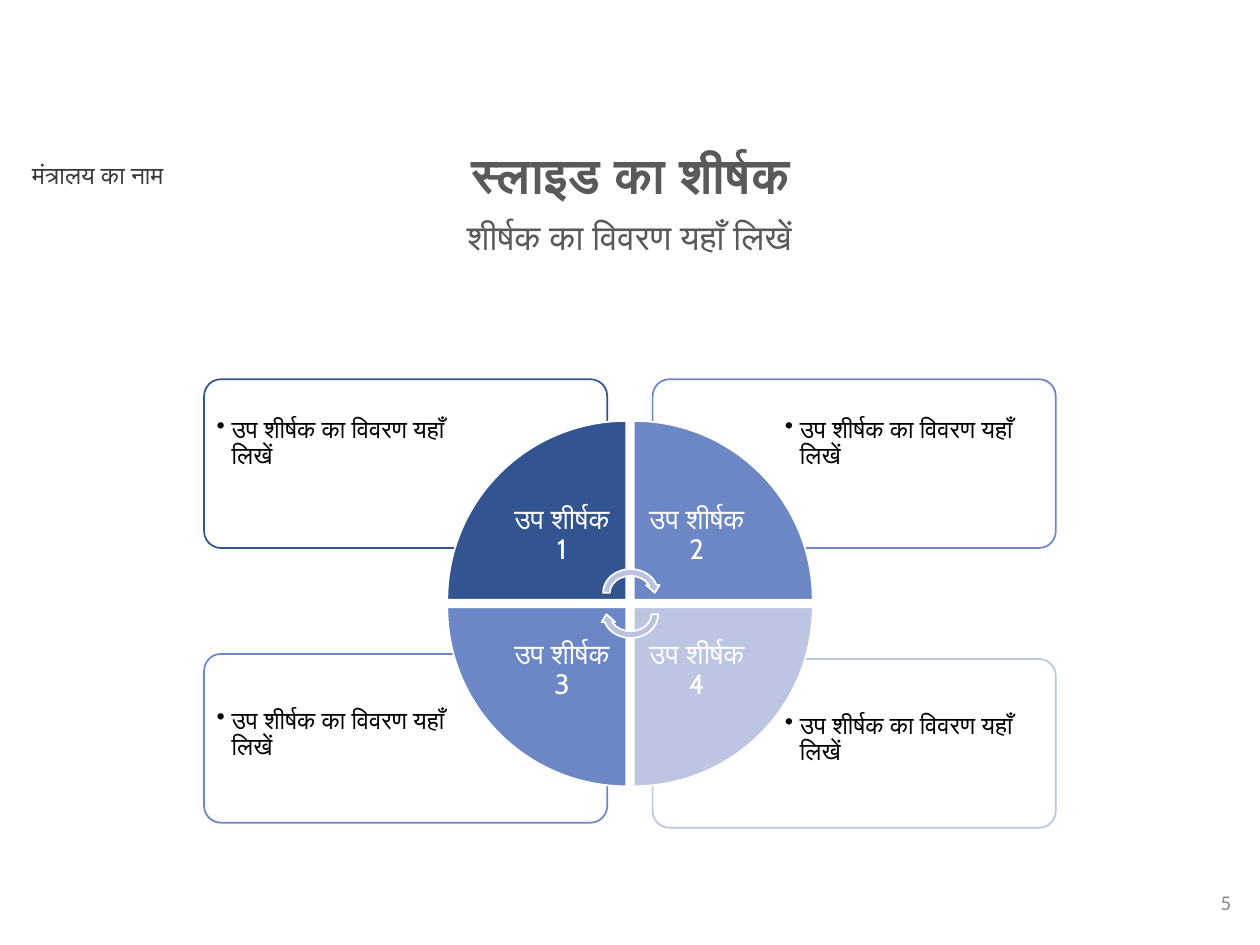
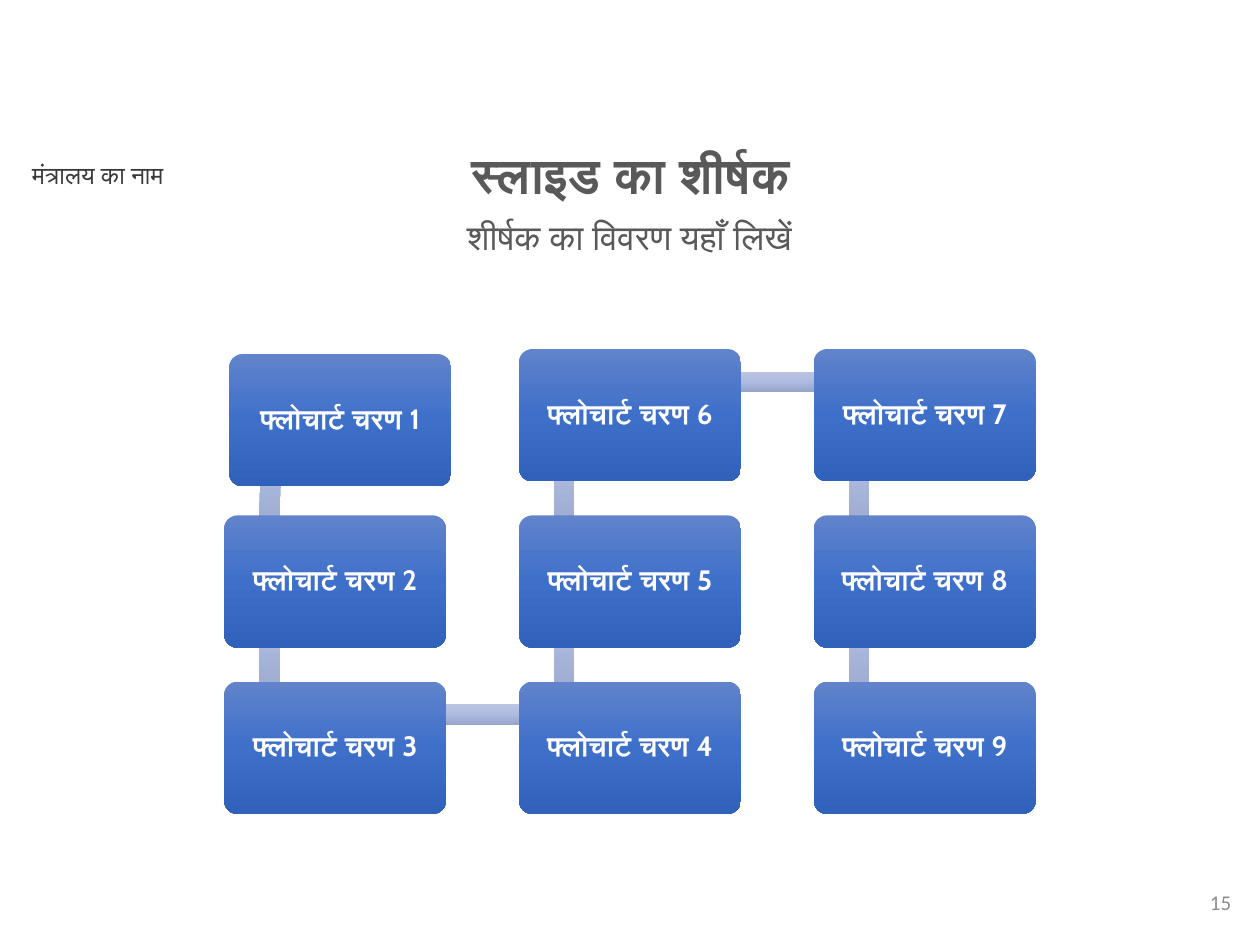
from dataclasses import dataclass
from itertools import pairwise
from typing import NamedTuple

from lxml import etree
from pptx import Presentation
from pptx import util as u
from pptx.dml.color import RGBColor
from pptx.enum import shapes, text
from pptx.oxml.ns import qn

PX = 9144  # 100 px to the inch
TITLE_ONLY = 5
WHITE, BLACK, GREY = "FFFFFF", "000000", "595959"
NAVY, BLUE, PALE, ARROW = "325491", "6C87C5", "BCC6E2", "B9C2E1"
STEP_STOPS = ("6183CB", "3E70CA", "3062BB")
LINK_STOPS = ("BBC5E3", "AEBBE0", "98A4CB")

PRESET = shapes.MSO_SHAPE
ALIGN = text.PP_ALIGN
ANCHOR = text.MSO_ANCHOR


class Box(NamedTuple):
    left: int
    top: int
    width: int
    height: int

    def emu(self) -> tuple:
        return tuple(u.Emu(length * PX) for length in self)


class Insets(NamedTuple):
    left: int = 10
    top: int = 5
    right: int = 10
    bottom: int = 5


@dataclass(frozen=True)
class TextStyle:
    size: int
    color: str
    font: str = "Calibri"
    bold: bool = False
    align: ALIGN = ALIGN.CENTER
    anchor: ANCHOR = ANCHOR.TOP
    spacing: float = 0.9
    after: int = 0
    bullet: bool = False


@dataclass(frozen=True)
class Quarter:
    """One wedge of the cycle with the card that stands behind it."""
    label: str
    column: int
    row: int
    rotation: int
    color: str
    card_top: int


MINISTRY = TextStyle(14, "3B3838", spacing=1.0)
TITLE = TextStyle(28, GREY, bold=True)
SUBTITLE = TextStyle(20, GREY)
PAGE = TextStyle(12, "8C8C8C", align=ALIGN.RIGHT, anchor=ANCHOR.MIDDLE, spacing=1.0)
WEDGE = TextStyle(16, WHITE, "Cabin", anchor=ANCHOR.MIDDLE, after=6)
STEP = TextStyle(16, WHITE, "Cabin", True, anchor=ANCHOR.MIDDLE, after=6)
CARD_UPPER = TextStyle(14, BLACK, "Cabin", align=ALIGN.LEFT,
                       anchor=ANCHOR.MIDDLE, after=2, bullet=True)
CARD_LOWER = TextStyle(14, BLACK, "Cabin", align=ALIGN.LEFT, after=2, bullet=True)

CARD_TEXT = "उप शीर्षक का विवरण यहाँ लिखें"
QUARTERS = (
    Quarter("उप शीर्षक 1", 0, 0, 0, NAVY, 301),
    Quarter("उप शीर्षक 2", 1, 0, 90, BLUE, 301),
    Quarter("उप शीर्षक 4", 1, 1, 180, PALE, 523),
    Quarter("उप शीर्षक 3", 0, 1, 270, BLUE, 519),
)


def rgb(color: str) -> RGBColor:
    return RGBColor.from_string(color)


def set_all(target, values: dict) -> None:
    for name, value in values.items():
        setattr(target, name, value)


def write(shape, words: str, style: TextStyle, insets: Insets = Insets()) -> None:
    frame = shape.text_frame
    frame.text = words
    set_all(frame, {
        "word_wrap": True,
        "auto_size": text.MSO_AUTO_SIZE.NONE,
        "vertical_anchor": style.anchor,
        **{f"margin_{side}": u.Emu(length * PX)
           for side, length in insets._asdict().items()},
    })
    paragraph = frame.paragraphs[0]
    set_all(paragraph, {
        "alignment": style.align,
        "line_spacing": style.spacing,
        "space_before": u.Pt(0),
        "space_after": u.Pt(style.after),
    })
    if style.bullet:
        properties = paragraph._p.get_or_add_pPr()
        properties.set("marL", str(12 * PX))
        properties.set("indent", str(-12 * PX))
        etree.SubElement(properties, qn("a:buChar")).set("char", "•")
    font = paragraph.runs[0].font
    set_all(font, {"size": u.Pt(style.size), "name": style.font, "bold": style.bold})
    font.color.rgb = rgb(style.color)


def add_text(slide, box: Box, words: str, style: TextStyle,
             insets: Insets = Insets()) -> None:
    write(slide.shapes.add_textbox(*box.emu()), words, style, insets)


def add_preset(slide, preset, box: Box, fill: str, line: str, rotation: float = 0):
    shape = slide.shapes.add_shape(preset, *box.emu())
    set_all(shape, {"rotation": rotation})
    shape.shadow.inherit = False
    shape.fill.solid()
    shape.fill.fore_color.rgb = rgb(fill)
    shape.line.color.rgb = rgb(line)
    shape.line.width = u.Pt(1)
    return shape


def add_gradient(slide, preset, box: Box, stops: tuple, rotation: float = 0):
    """Add an unlined shape shaded evenly from top to bottom."""
    shape = slide.shapes.add_shape(preset, *box.emu())
    shape.rotation = rotation
    shape.shadow.inherit = False
    shape.line.fill.background()
    shape.fill.gradient()
    shape.fill.gradient_angle = 270
    stop_list = shape.element.spPr.find(".//" + qn("a:gsLst"))
    stop_list.clear()
    for index, color in enumerate(stops):
        stop = etree.SubElement(stop_list, qn("a:gs"))
        stop.set("pos", str(index * 100000 // (len(stops) - 1)))
        etree.SubElement(stop, qn("a:srgbClr")).set("val", color)
    return shape


def start_slide(deck, page: str):
    """Add a slide with the heading, ministry name and page number."""
    slide = deck.slides.add_slide(deck.slide_layouts[TITLE_ONLY])
    title = slide.shapes.title
    places = ("left", "top", "width", "height")
    set_all(title, dict(zip(places, Box(186, 115, 629, 47).emu())))
    write(title, "स्लाइड का शीर्षक", TITLE)
    add_text(slide, Box(146, 170, 707, 63), "शीर्षक का विवरण यहाँ लिखें", SUBTITLE)
    add_text(slide, Box(0, 122, 155, 34), "मंत्रालय का नाम", MINISTRY)
    add_text(slide, Box(762, 696, 225, 40), page, PAGE)
    return slide


def add_card(slide, quarter: Quarter) -> None:
    box = Box(162 + 356 * quarter.column, quarter.card_top, 320, 134)
    card = add_preset(slide, PRESET.ROUNDED_RECTANGLE, box, WHITE, quarter.color)
    card.adjustments[0] = 0.1
    left, right = ((6, 100), (101, 6))[quarter.column]
    top, bottom = ((6, 38), (39, 6))[quarter.row]
    style = (CARD_UPPER, CARD_LOWER)[quarter.row]
    write(card, CARD_TEXT, style, Insets(left, top, right, bottom))


def add_wedge(slide, quarter: Quarter) -> None:
    box = Box(355 + 148 * quarter.column, 334 + 148 * quarter.row, 142, 142)
    add_preset(slide, PRESET.PIE_WEDGE, box, quarter.color, WHITE, quarter.rotation)
    label = Box(396 + 107 * quarter.column, 375 + 107 * quarter.row, 100, 100)
    add_text(slide, label, quarter.label, WEDGE, Insets(12, 12, 12, 12))


def build_cycle(deck) -> None:
    slide = start_slide(deck, "5")
    for quarter in reversed(QUARTERS):
        add_card(slide, quarter)
    for quarter in QUARTERS:
        add_wedge(slide, quarter)
    for top, rotation in ((449, 0), (466, 180)):
        add_preset(slide, PRESET.CIRCULAR_ARROW, Box(476, top, 49, 43),
                   ARROW, WHITE, rotation)


def step_box(index: int) -> Box:
    """Place a step in three columns that run down, up, then down."""
    column, place = divmod(index, 3)
    row = 2 - place if column % 2 else place
    nudge = 4 if index == 0 else 0
    return Box(178 + 234 * column + nudge, 277 + 132 * row + nudge, 176, 105)


def add_link(slide, start: Box, end: Box) -> None:
    left, top = min(start.left, end.left), min(start.top, end.top)
    slant = 0
    if start.top == end.top:
        bar = Box(left + 37, top + 18, 233, 16)
    elif start.left == end.left:
        bar = Box(left + 28, top + 26, 16, 131)
    else:
        bar, slant = Box(left + 29, top + 26, 16, 127), 1.7
    add_gradient(slide, PRESET.RECTANGLE, bar, LINK_STOPS, slant)


def build_flowchart(deck) -> None:
    slide = start_slide(deck, "15")
    steps = [step_box(index) for index in range(9)]
    for start, end in pairwise(steps):
        add_link(slide, start, end)
    for number, box in enumerate(steps, 1):
        step = add_gradient(slide, PRESET.ROUNDED_RECTANGLE, box, STEP_STOPS)
        step.adjustments[0] = 0.1
        write(step, f"फ्लोचार्ट चरण {number}", STEP, Insets(7, 7, 7, 7))


def main() -> None:
    deck = Presentation()
    deck.slide_width, deck.slide_height = u.Emu(1000 * PX), u.Emu(750 * PX)
    build_cycle(deck)
    build_flowchart(deck)
    deck.save("out.pptx")


if __name__ == "__main__":
    main()
